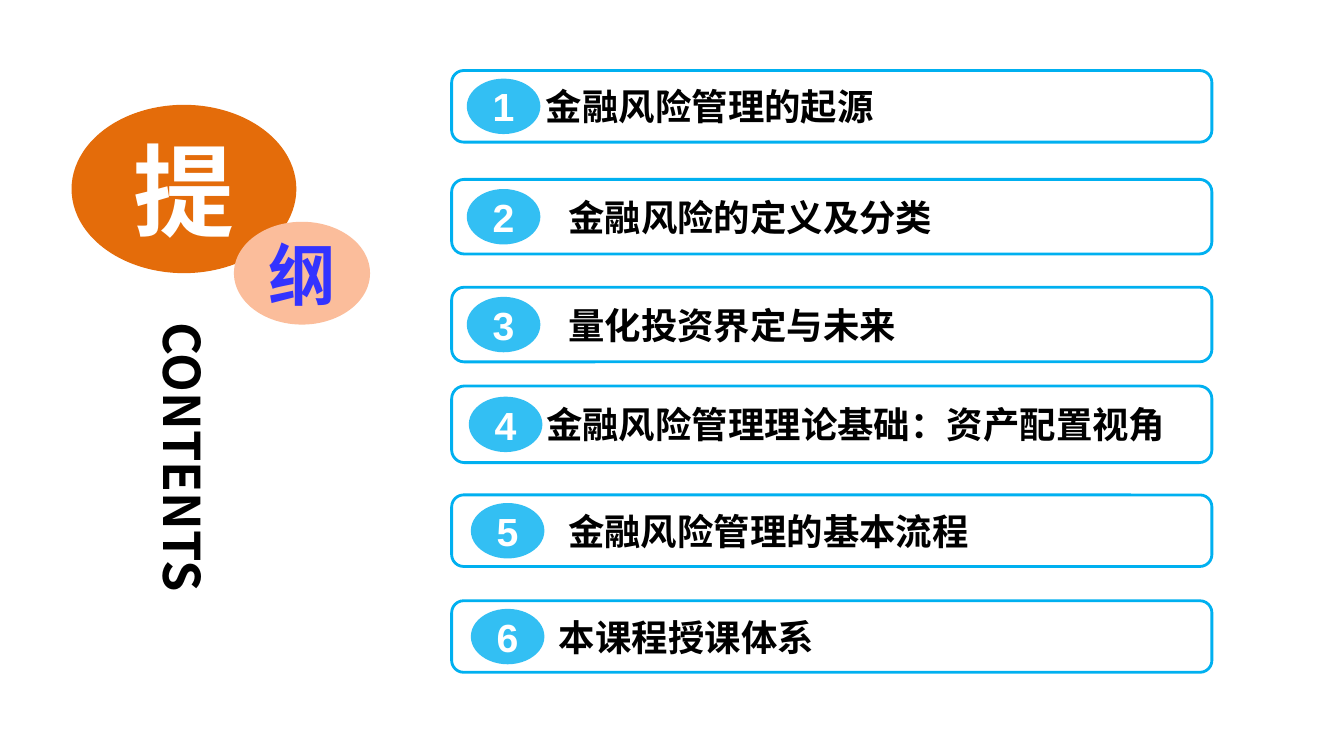
from pptx import Presentation
from pptx.dml.color import RGBColor
from pptx.enum.shapes import MSO_SHAPE
from pptx.enum.text import MSO_ANCHOR, MSO_AUTO_SIZE, PP_ALIGN
from pptx.oxml.ns import qn
from pptx.util import Inches, Pt
from lxml.etree import SubElement

HUES = {"white": "FFFFFF", "black": "000000", "sky": "00B0F0",
        "orange": "E46C0A", "peach": "FBBD9B", "blue": "3333FF"}
HAN = "Noto Sans CJK SC"
LEFT, WIDTH = 4.48, 7.54
ROWS = [
    ("金融风险管理的起源", 0.7, 0.71, 0.15, 0.9),
    ("金融风险的定义及分类", 1.78, 0.74, 0.15, 1.12),
    ("量化投资界定与未来", 2.85, 0.74, 0.15, 1.12),
    ("金融风险管理理论基础：资产配置视角", 3.83, 0.76, 0.17, 0.9),
    ("金融风险管理的基本流程", 4.91, 0.71, 0.19, 1.12),
    ("本课程授课体系", 5.96, 0.71, 0.19, 1.03),
]


def tint(hue):
    """Return the named colour."""
    return RGBColor.from_string(HUES[hue])


def write(shape, text, size, hue, font=HAN, align=PP_ALIGN.CENTER, inset=0):
    """Put one bold, vertically centred line of text in a shape."""
    frame = shape.text_frame
    frame.text = text
    frame.auto_size = MSO_AUTO_SIZE.NONE
    frame.vertical_anchor = MSO_ANCHOR.MIDDLE
    frame.margin_left = Inches(inset)
    frame.margin_right = frame.margin_top = frame.margin_bottom = 0
    line = frame.paragraphs[0]
    line.alignment = align
    run = line.runs[0]
    run.font.name, run.font.size, run.font.bold = font, Pt(size), True
    run.font.color.rgb = tint(hue)
    SubElement(run.font._element, qn("a:ea")).set("typeface", font)


def draw(slide, kind, box, fill, edge=None):
    """Add a flat preset shape with an optional outline."""
    shape = slide.shapes.add_shape(kind, *map(Inches, box))
    shape.shadow.inherit = False
    shape.fill.solid()
    shape.fill.fore_color.rgb = tint(fill)
    if edge:
        shape.line.color.rgb = tint(edge)
        shape.line.width = Pt(2)
    else:
        shape.line.fill.background()
    return shape


def badge(slide, box, label):
    """Add a translucent numbered oval."""
    oval = draw(slide, MSO_SHAPE.OVAL, box, "sky")
    color = oval.fill._xPr.find(qn("a:solidFill"))[0]
    SubElement(color, qn("a:alpha")).set("val", "80000")
    write(oval, label, 28, "white", "Arial")
    oval.text_frame.word_wrap = False


def entry(slide, box, label, text, shift, inset):
    """Add one outlined row with its badge."""
    left, top, wide, high = box
    bar = draw(slide, MSO_SHAPE.ROUNDED_RECTANGLE, box, "white", "sky")
    write(bar, text, 26, "black", align=PP_ALIGN.LEFT, inset=inset)
    badge(slide, (left + shift, top + (high - 0.55) / 2, 0.73, 0.55), label)


def heading(slide, box):
    """Add the two title ovals and the vertical title below them."""
    left, top, wide, high = box
    big = draw(slide, MSO_SHAPE.OVAL, (left, top, 2.23, 1.67), "orange")
    write(big, "提", 72, "white")
    small = draw(slide, MSO_SHAPE.OVAL,
                 (left + wide - 1.35, top + 1.16, 1.35, 1.02), "peach")
    write(small, "纲", 48, "blue")
    title = slide.shapes.title
    title.left, title.top = Inches(left + 0.67), Inches(top + high - 3)
    title.width, title.height = Inches(0.89), Inches(3)
    write(title, "CONTENTS", 36, "black", align=PP_ALIGN.LEFT)
    title.text_frame._txBody.bodyPr.set("vert", "eaVert")


def agenda(slide, left, wide):
    """Add all numbered rows in one column."""
    for num, (text, top, high, shift, inset) in enumerate(ROWS, 1):
        entry(slide, (left, top, wide, high), str(num), text, shift, inset)


def main():
    """Build and save the slide."""
    deck = Presentation()
    deck.slide_width, deck.slide_height = Inches(13.33), Inches(7.5)
    slide = deck.slides.add_slide(deck.slide_layouts[5])
    heading(slide, (0.71, 1.04, 2.96, 5.16))
    agenda(slide, LEFT, WIDTH)
    deck.save("out.pptx")


if __name__ == "__main__":
    main()
